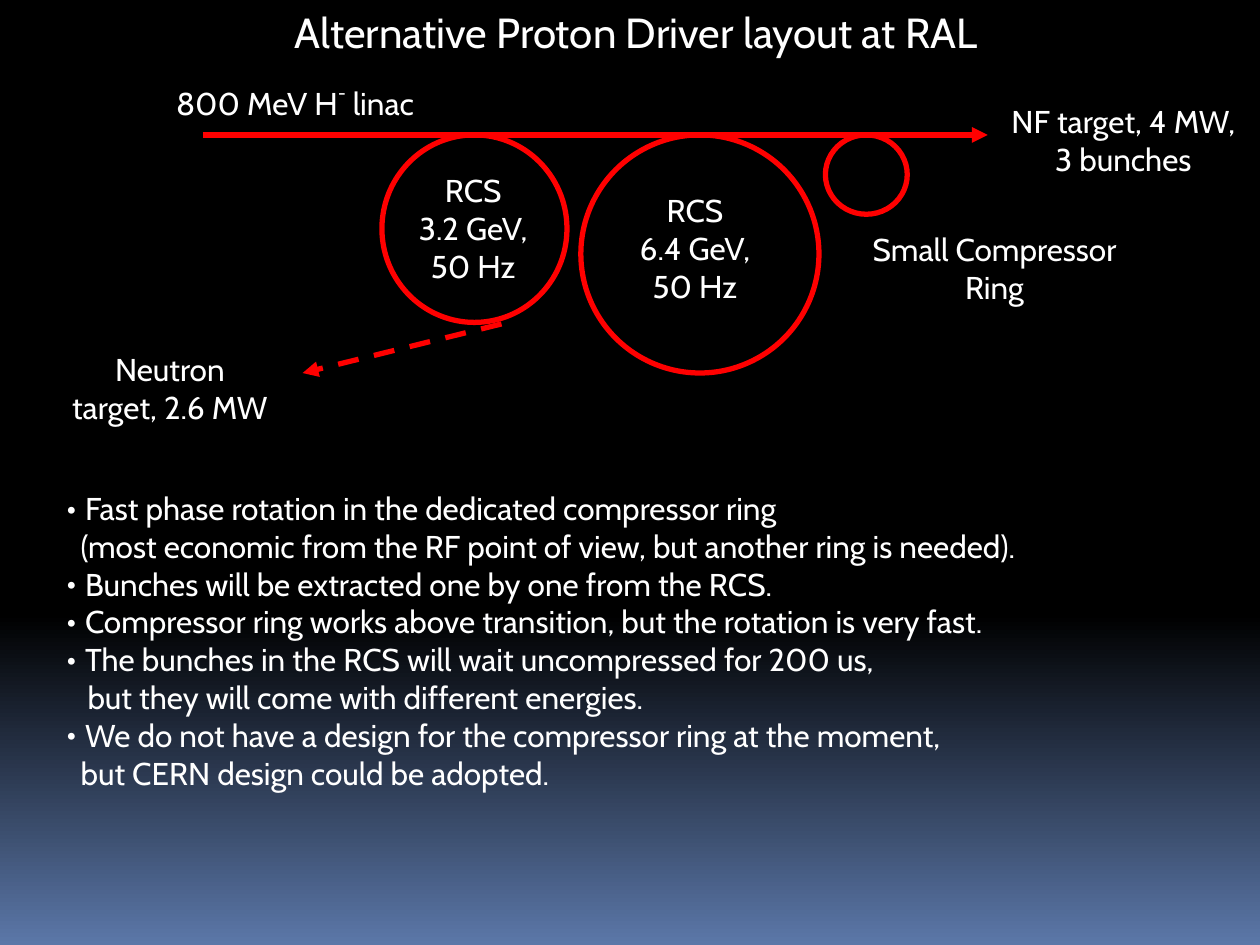
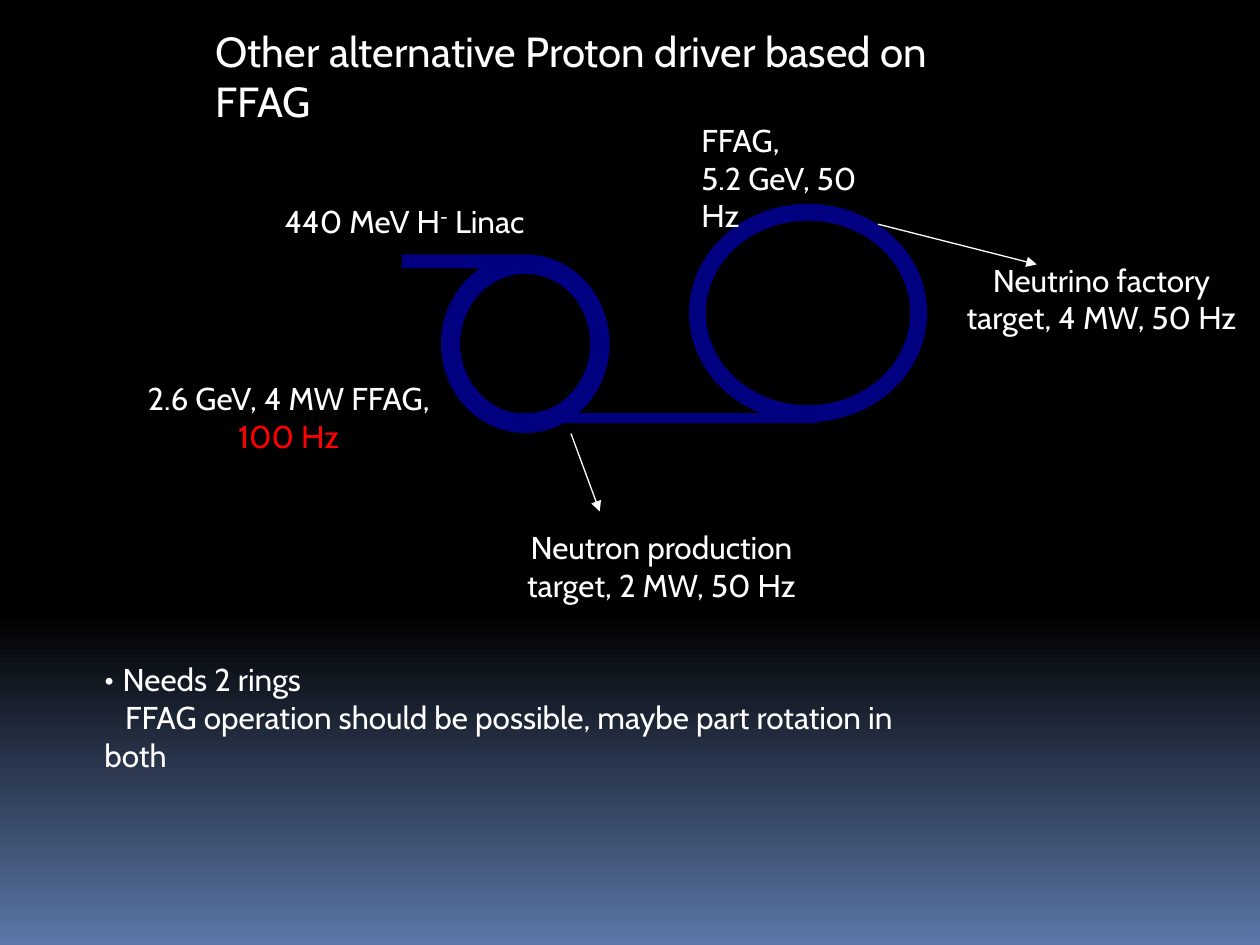
from dataclasses import dataclass
from typing import NamedTuple

from lxml.etree import SubElement
from pptx import Presentation
from pptx.dml.color import RGBColor
from pptx.enum.dml import MSO_LINE
from pptx.enum.shapes import MSO_CONNECTOR, MSO_SHAPE
from pptx.enum.text import MSO_ANCHOR, MSO_AUTO_SIZE, PP_ALIGN
from pptx.oxml.ns import qn
from pptx.util import Cm, Pt

COLORS = {
    "black": "000000",
    "haze": "5B77A8",
    "white": "FFFFFF",
    "red": "FF0000",
    "navy": "000080",
}
FONT = "Cabin"
BACKGROUND_STOPS = [(0, "black"), (65, "black"), (100, "haze")]
BULLET_INDENT = 0.37
TOP = 2.72  # height of the beam line, which every ring on slide 1 touches


class Run(NamedTuple):
    text: str
    color: str = "white"
    raised: int = 0


class Item(NamedTuple):
    """A list line: bulleted, or a continuation with a first-line indent."""
    text: str
    first_indent: float = 0

    @property
    def bulleted(self) -> bool:
        return self.first_indent == 0


class Box(NamedTuple):
    left: float
    top: float
    width: float
    height: float


@dataclass
class Label:
    box: Box
    lines: list
    align: PP_ALIGN = PP_ALIGN.CENTER


@dataclass
class Solid:
    kind: MSO_SHAPE
    box: Box
    thickness: float | None = None


@dataclass
class Arrow:
    start: tuple[float, float]
    end: tuple[float, float]
    color: str = "white"
    weight: float = 0.75
    dashed: bool = False


def rgb(name: str) -> RGBColor:
    return RGBColor.from_string(COLORS[name])


def set_background(prs) -> None:
    master = prs.slide_master
    fill = master.background.fill
    fill.gradient()
    fill.gradient_angle = 270
    stops = next(master.element.iter(qn("a:gsLst")))
    stops.clear()
    for percent, color in BACKGROUND_STOPS:
        stop = SubElement(stops, qn("a:gs"), pos=str(percent * 1000))
        SubElement(stop, qn("a:srgbClr"), val=COLORS[color])


def write_text(tf, lines: list, *, size: float = 18, align=PP_ALIGN.LEFT) -> None:
    """Fill a frame; each line is a string, an Item or a list of Runs."""
    tf.word_wrap = True
    tf.auto_size = MSO_AUTO_SIZE.NONE
    tf.vertical_anchor = MSO_ANCHOR.TOP
    for i, line in enumerate(lines):
        p = tf.add_paragraph() if i else tf.paragraphs[0]
        p.alignment = align
        p.space_before = Pt(0)
        if isinstance(line, Item):
            indent_item(p, line)
            line = line.text
        for run in [Run(line)] if isinstance(line, str) else line:
            r = p.add_run()
            r.text = run.text
            r.font.name = FONT
            r.font.size = Pt(size)
            r.font.color.rgb = rgb(run.color)
            if run.raised:
                r.font._element.set("baseline", str(run.raised * 1000))


def indent_item(p, item: Item) -> None:
    pPr = p._p.get_or_add_pPr()
    margin = BULLET_INDENT if item.bulleted else 0
    pPr.set("marL", str(Cm(margin)))
    pPr.set("indent", str(Cm(item.first_indent - margin)))
    if item.bulleted:
        SubElement(pPr, qn("a:buFont"), typeface=FONT)
        SubElement(pPr, qn("a:buChar"), char="•")
    else:
        SubElement(pPr, qn("a:buNone"))


def place(sp, box: Box) -> None:
    sp.left, sp.top, sp.width, sp.height = map(Cm, box)


def new_slide(prs, title: str, title_box: Box, items: list[Item], list_box: Box):
    s = prs.slides.add_slide(prs.slide_layouts[1])
    title_sp, body_sp = s.placeholders
    place(title_sp, title_box)
    write_text(title_sp.text_frame, [title], size=24)
    place(body_sp, list_box)
    write_text(body_sp.text_frame, items)
    return s


def add_label(s, label: Label) -> None:
    sp = s.shapes.add_textbox(*map(Cm, label.box))
    write_text(sp.text_frame, label.lines, align=label.align)


def add_ring(s, box: Box) -> None:
    sp = s.shapes.add_shape(MSO_SHAPE.OVAL, *map(Cm, box))
    sp.shadow.inherit = False
    sp.fill.background()
    sp.line.color.rgb = rgb("red")
    sp.line.width = Pt(3)


def add_solid(s, solid: Solid) -> None:
    sp = s.shapes.add_shape(solid.kind, *map(Cm, solid.box))
    sp.shadow.inherit = False
    sp.fill.solid()
    sp.fill.fore_color.rgb = rgb("navy")
    sp.line.fill.background()
    if solid.thickness:
        sp.adjustments[0] = solid.thickness / min(solid.box.width, solid.box.height)


def add_arrow(s, arrow: Arrow) -> None:
    sp = s.shapes.add_connector(
        MSO_CONNECTOR.STRAIGHT, *map(Cm, arrow.start + arrow.end))
    sp.line.color.rgb = rgb(arrow.color)
    sp.line.width = Pt(arrow.weight)
    if arrow.dashed:
        sp.line.dash_style = MSO_LINE.DASH
    SubElement(sp.line._get_or_add_ln(), qn("a:tailEnd"), type="triangle")
    SubElement(sp._element.spPr, qn("a:effectLst"))


def build_ral_layout(prs) -> None:
    s = new_slide(
        prs, "Alternative Proton Driver layout at RAL", Box(5.69, 0, 15.29, 1.27),
        [
            Item("Fast phase rotation in the dedicated compressor ring"),
            Item("(most economic from the RF point of view, "
                 "but another ring is needed).", 0.28),
            Item("Bunches will be extracted one by one from the RCS."),
            Item("Compressor ring works above transition, "
                 "but the rotation is very fast."),
            Item("The bunches in the RCS will wait uncompressed for 200 us,"),
            Item("but they will come with different energies.", 0.42),
            Item("We do not have a design for the compressor ring at the moment,"),
            Item("but CERN design could be adopted.", 0.28),
        ],
        Box(1.09, 9.73, 20.7, 7.11))

    # Rings: first RCS, second RCS, compressor
    for left, width, height in [
            (7.7, 3.73, 3.78), (11.71, 4.8, 4.8), (16.64, 1.65, 1.6)]:
        add_ring(s, Box(left, TOP, width, height))

    # Beam line and neutron extraction
    add_arrow(s, Arrow((4.09, TOP), (19.91, TOP), "red", 3))
    add_arrow(s, Arrow((10.11, 6.53), (6.1, 7.52), "red", 3, dashed=True))

    # Labels
    for label in [
        Label(Box(8.03, 3.33, 3.02, 2.54), ["RCS", "3.2 GeV,", "50 Hz"]),
        Label(Box(12.5, 3.73, 3.02, 2.54), ["RCS", "6.4 GeV,", "50 Hz"]),
        Label(Box(3.3, 1.52, 5.4, 1.02),
              [[Run("800 MeV H"), Run("-", raised=50), Run(" linac")]],
              PP_ALIGN.LEFT),
        Label(Box(17.09, 4.52, 5.92, 1.78), ["Small Compressor", "Ring"]),
        Label(Box(19.89, 1.93, 5.51, 1.78), ["NF target, 4 MW,", "3 bunches"]),
        Label(Box(1.09, 6.93, 4.67, 1.78), ["Neutron", "target, 2.6 MW"]),
    ]:
        add_label(s, label)


def build_ffag_layout(prs) -> None:
    s = new_slide(
        prs, "Other alternative Proton driver based on FFAG",
        Box(4.09, 0.38, 16.87, 1.27),
        [
            Item("Needs 2 rings"),
            Item("FFAG operation should be possible, "
                 "maybe part rotation in both", 0.42),
        ],
        Box(1.85, 13.18, 17.63, 1.8))

    # FFAG rings, linac and transfer line
    for solid in [
        Solid(MSO_SHAPE.DONUT, Box(8.89, 5.13, 3.4, 3.6), 0.39),
        Solid(MSO_SHAPE.RECTANGLE, Box(8.1, 5.13, 2.41, 0.28)),
        Solid(MSO_SHAPE.RECTANGLE, Box(10.49, 8.33, 5.99, 0.2)),
        Solid(MSO_SHAPE.DONUT, Box(13.89, 4.11, 4.8, 4.4), 0.34),
    ]:
        add_solid(s, solid)

    # Extraction to the targets
    add_arrow(s, Arrow((11.51, 8.74), (12.09, 10.31)))
    add_arrow(s, Arrow((17.7, 4.52), (20.9, 5.33)))

    # Labels
    for label in [
        Label(Box(5.49, 3.94, 5.51, 1.02),
              [[Run("440 MeV H"), Run("-", raised=30), Run(" Linac")]],
              PP_ALIGN.LEFT),
        Label(Box(2.29, 7.52, 7.06, 1.78),
              ["2.6 GeV, 4 MW FFAG,", [Run("100 Hz", "red")]]),
        Label(Box(19.13, 5.13, 6.15, 1.78),
              ["Neutrino factory", "target, 4 MW, 50 Hz"]),
        Label(Box(10.26, 10.52, 6.15, 1.78),
              ["Neutron production", "target, 2 MW, 50 Hz"]),
        Label(Box(13.89, 2.31, 4.29, 1.8),
              ["FFAG,", "5.2 GeV, 50 Hz"], PP_ALIGN.LEFT),
    ]:
        add_label(s, label)


def main() -> None:
    prs = Presentation()
    prs.slide_width, prs.slide_height = Cm(25.4), Cm(19.05)
    set_background(prs)
    build_ral_layout(prs)
    build_ffag_layout(prs)
    prs.save("out.pptx")


if __name__ == "__main__":
    main()
